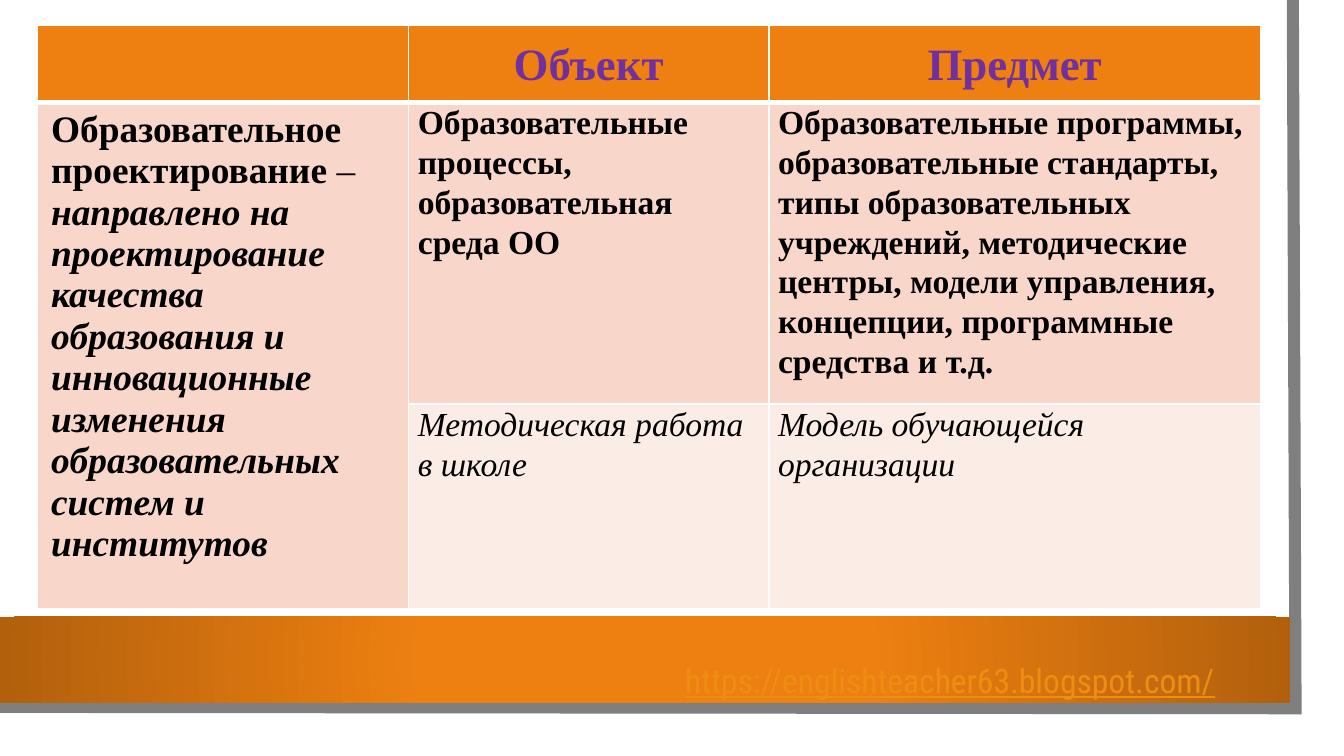
from lxml import etree
from pptx import Presentation
from pptx.dml.color import RGBColor
from pptx.enum.shapes import MSO_SHAPE
from pptx.enum.text import MSO_ANCHOR, PP_ALIGN
from pptx.oxml import parse_xml
from pptx.oxml.ns import qn
from pptx.util import Inches, Pt

RECTANGLE = MSO_SHAPE.RECTANGLE
TOP, MIDDLE = MSO_ANCHOR.TOP, MSO_ANCHOR.MIDDLE
LEFT, CENTER = PP_ALIGN.LEFT, PP_ALIGN.CENTER

WHITE = RGBColor(0xFF, 0xFF, 0xFF)
BLACK = RGBColor(0x00, 0x00, 0x00)
GRAY = RGBColor(0x7F, 0x7F, 0x7F)
ORANGE = RGBColor(0xEE, 0x80, 0x11)
DARK_ORANGE = RGBColor(0xB2, 0x60, 0x0C)
LINK_ORANGE = RGBColor(0xEE, 0x8E, 0x11)
PURPLE = RGBColor(0x70, 0x30, 0xA0)
PEACH = RGBColor(0xF8, 0xD7, 0xCA)
PALE_PEACH = RGBColor(0xFC, 0xEC, 0xE6)

SLIDE_WIDTH = 10
SLIDE_HEIGHT = SLIDE_WIDTH * 9 / 16
WIDE_MARGINS = (0.1, 0.05)
TIGHT_MARGINS = (0.07, 0)


class SlideBuilder:
    """Places elements on a grid of 100 columns, each unit a tenth of an inch."""

    unit = SLIDE_WIDTH / 100
    table_font = "Times New Roman"
    link_font = "Roboto Condensed"

    def __init__(self, slide):
        self.slide = slide
        slide.background.fill.solid()
        slide.background.fill.fore_color.rgb = WHITE

    def grid(self, *lengths):
        return [Inches(length * self.unit) for length in lengths]

    def outline(self, points, color, width):
        start, *others = [self.grid(*point) for point in points]
        builder = self.slide.shapes.build_freeform(*start)
        builder.add_line_segments(others, close=False)
        shape = builder.convert_to_shape()
        shape.shadow.inherit = False
        shape.fill.background()
        shape.line.color.rgb = color
        shape.line.width = Pt(width)
        etree.SubElement(shape._element.spPr.find(qn("a:ln")), qn("a:miter"), lim="800000")

    def radial_band(self, box, stops):
        shape = self.slide.shapes.add_shape(RECTANGLE, *self.grid(*box))
        shape.shadow.inherit = False
        shape.line.fill.background()
        shape.fill.gradient()
        gradient = shape._element.spPr.find(qn("a:gradFill"))
        for child in list(gradient):
            gradient.remove(child)
        stop_list = etree.SubElement(gradient, qn("a:gsLst"))
        for position, color in stops:
            stop = etree.SubElement(stop_list, qn("a:gs"), pos=str(position * 1000))
            etree.SubElement(stop, qn("a:srgbClr"), val=str(color))
        circle = etree.SubElement(gradient, qn("a:path"), path="circle")
        etree.SubElement(circle, qn("a:fillToRect"), l="50000", t="50000", r="50000", b="50000")

    def run(self, paragraph, text, font, size, color, bold=False, italic=False, underline=False):
        run = paragraph.add_run()
        run.text = text
        run.font.name = font
        run.font.size = Pt(size)
        run.font.color.rgb = color
        run.font.bold = bold
        run.font.italic = italic
        run.font.underline = underline

    def link_text(self, box, text):
        frame = self.slide.shapes.add_textbox(*self.grid(*box)).text_frame
        frame.word_wrap = True
        self.run(frame.paragraphs[0], text, self.link_font, 18, LINK_ORANGE, underline=True)

    def table(self, box, columns, rows):
        frame = self.slide.shapes.add_table(len(rows), len(columns), *self.grid(*box))
        table = frame.table
        table.first_row = table.horz_banding = False
        for column, width in zip(table.columns, self.grid(*columns)):
            column.width = width
        for row, height in zip(table.rows, self.grid(*rows)):
            row.height = height
        # Rows grow with their text, so the frame keeps its own size
        frame.width, frame.height = self.grid(*box[2:])
        return table

    def cell(self, cell, fill, top=1, bottom=1):
        properties = cell._tc.get_or_add_tcPr()
        for side, width in (("L", 1), ("R", 1), ("T", top), ("B", bottom)):
            properties.append(parse_xml(
                f'<a:ln{side} xmlns:a="http://schemas.openxmlformats.org/drawingml/2006/main" '
                f'w="{Pt(width)}"><a:solidFill><a:srgbClr val="{WHITE}"/></a:solidFill></a:ln{side}>'))
        cell.fill.solid()
        cell.fill.fore_color.rgb = fill

    def cell_text(self, cell, runs, size, color=BLACK, margins=TIGHT_MARGINS,
                  spacing=1.07, align=LEFT, anchor=TOP):
        cell.margin_left = cell.margin_right = Inches(margins[0])
        cell.margin_top = cell.margin_bottom = Inches(margins[1])
        cell.vertical_anchor = anchor
        paragraph = cell.text_frame.paragraphs[0]
        paragraph.alignment = align
        paragraph.line_spacing = spacing
        for text, bold, italic in runs:
            self.run(paragraph, text, self.table_font, size, color, bold, italic)


def main():
    presentation = Presentation()
    presentation.slide_width = Inches(SLIDE_WIDTH)
    presentation.slide_height = Inches(SLIDE_HEIGHT)
    builder = SlideBuilder(presentation.slides.add_slide(presentation.slide_layouts[6]))

    # Page edge and footer band
    builder.outline([(96.2, 0), (96.4, 52.7), (-0.2, 52.6)], GRAY, 6.5)
    builder.radial_band((0, 45.9, 96, 6.4), [(0, ORANGE), (34, ORANGE), (100, DARK_ORANGE)])
    builder.link_text((50, 48.6, 43.6, 4), "https://englishteacher63.blogspot.com/")

    # Table grid: fills and borders
    table = builder.table((2.8, 1.9, 32.8, 32.8), (27.6, 26.8, 36.6), (5.7, 8.7, 8.7))
    for column in range(3):
        builder.cell(table.cell(0, column), ORANGE, bottom=3)
        builder.cell(table.cell(1, column), PEACH, top=3)
        builder.cell(table.cell(2, column), PALE_PEACH if column else PEACH)
    table.cell(1, 0).merge(table.cell(2, 0))

    # Header row
    for column, heading in enumerate(("Объект", "Предмет"), start=1):
        builder.cell_text(table.cell(0, column), [(heading, True, False)], 24, PURPLE,
                          align=CENTER, anchor=MIDDLE)

    # Definition spanning both body rows
    builder.cell_text(table.cell(1, 0), [
        ("Образовательное проектирование", True, False),
        (" – ", False, False),
        ("направлено на проектирование качества образования и инновационные "
         "изменения образовательных систем и институтов", True, True),
    ], 20, margins=WIDE_MARGINS, spacing=1.0)

    # Objects and subjects: bold general row, italic example row
    body = [
        ("Образовательные процессы, образовательная среда ОО",
         "Образовательные программы, образовательные стандарты, типы образовательных "
         "учреждений, методические центры, модели управления, концепции, программные "
         "средства и т.д."),
        ("Методическая работа в школе", "Модель обучающейся организации"),
    ]
    for row, texts in enumerate(body, start=1):
        for column, text in enumerate(texts, start=1):
            builder.cell_text(table.cell(row, column), [(text, row == 1, row == 2)], 18)

    presentation.save("out.pptx")


if __name__ == "__main__":
    main()
